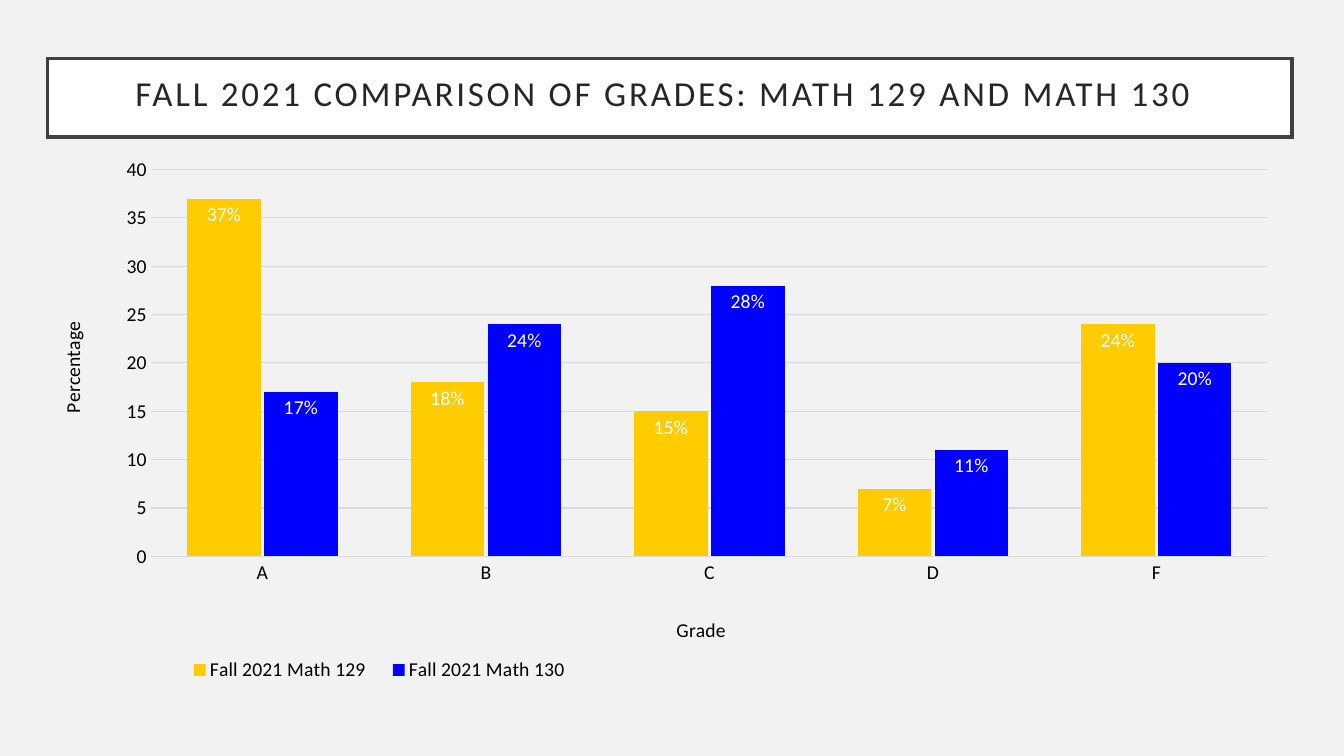
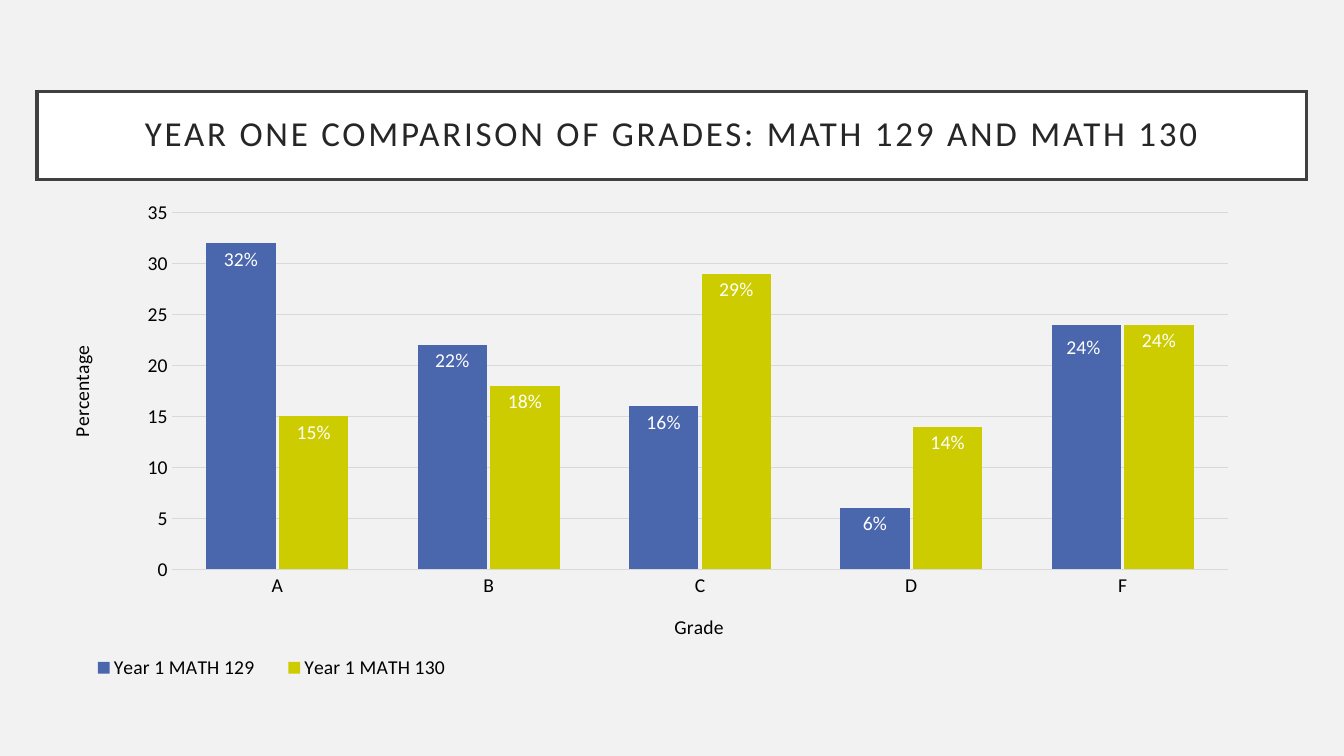
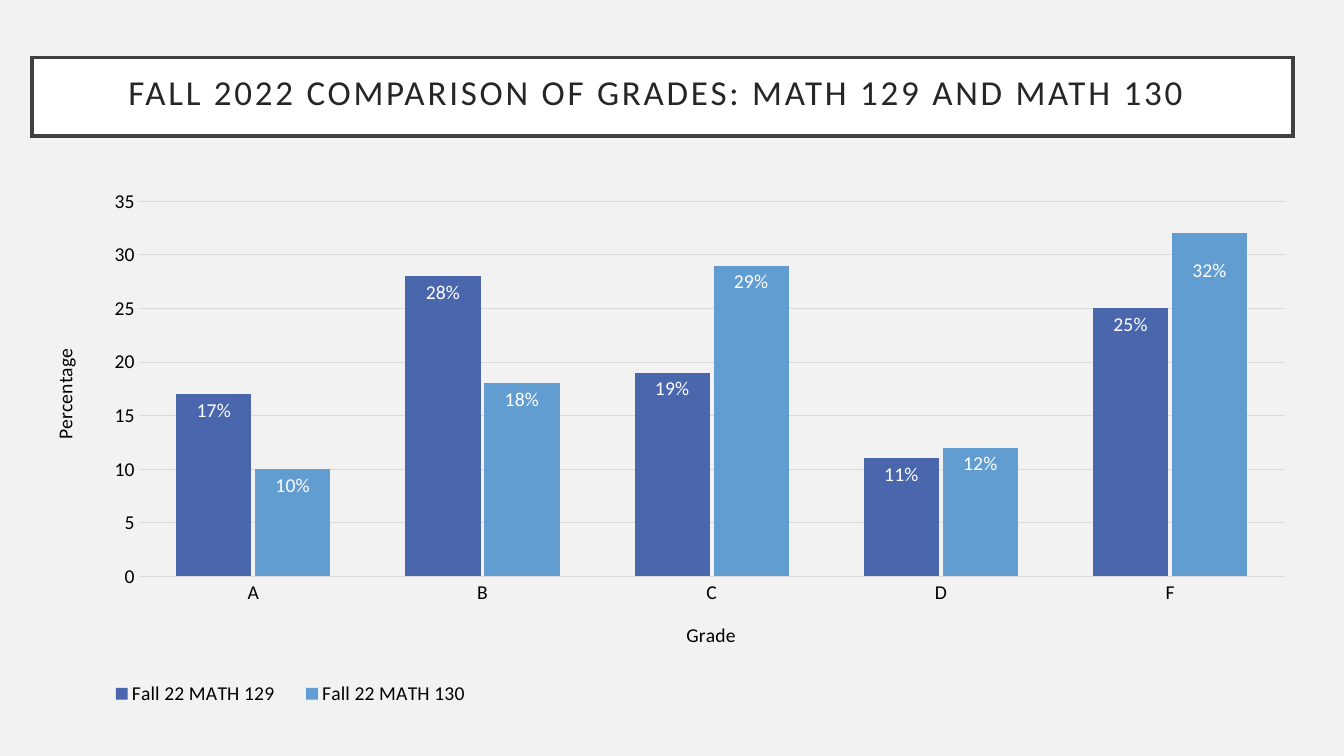
"""Builds three slides that compare the grades of MATH 129 and MATH 130."""
from copy import deepcopy
from dataclasses import dataclass
from typing import NamedTuple, Optional

from lxml import etree
from pptx import Presentation
from pptx import util as u
from pptx.chart.chart import Chart
from pptx.chart.data import CategoryChartData
from pptx.dml.color import RGBColor
from pptx.enum import chart as ce
from pptx.enum import shapes, text
from pptx.oxml.ns import qn
from pptx.slide import Slide

BACKDROP = RGBColor(0xF2, 0xF2, 0xF2)
WHITE = RGBColor(0xFF, 0xFF, 0xFF)
BLACK = RGBColor(0x00, 0x00, 0x00)
FRAME = RGBColor(0x40, 0x40, 0x40)
HEADING = RGBColor(0x26, 0x26, 0x26)
GRID = RGBColor(0xD9, 0xD9, 0xD9)
GOLD = RGBColor(0xFF, 0xCC, 0x00)
BLUE = RGBColor(0x00, 0x00, 0xFF)
INDIGO = RGBColor(0x4A, 0x66, 0xAC)
OLIVE = RGBColor(0xCC, 0xCC, 0x00)
SKY = RGBColor(0x62, 0x9D, 0xD1)

FONT = "Calibri"
CHART_TEXT = 14
GRADES = ("A", "B", "C", "D", "F")
LAYOUT_FOLLOWS = {qn("c:idx"), qn("c:legendPos"), qn("c:tx")}


class Spot(NamedTuple):
    """A position or offset in points."""
    x: float
    y: float


class Box(NamedTuple):
    """A rectangle in points."""
    x: float
    y: float
    w: float
    h: float


class Course(NamedTuple):
    """The grade percentages of one course."""
    name: str
    percentages: tuple[int, ...]
    color: RGBColor


class LabelShift(NamedTuple):
    """A value label moved off its usual place."""
    course: int
    grade: int
    offset: Spot


@dataclass(frozen=True)
class Comparison:
    """The content and placing of one slide."""
    heading: str
    heading_box: Box
    chart_box: Box
    plot_box: Box
    grade_title: Spot
    percentage_title: Spot
    legend_box: Box
    top_percentage: int
    courses: tuple[Course, Course]
    heading_nudge: Spot = Spot(0, 0)
    label_shift: Optional[LabelShift] = None


COMPARISONS = (
    Comparison(
        "FALL 2021 COMPARISON OF GRADES: MATH 129 AND MATH 130",
        Box(33.8, 41.8, 889.2, 56.2), Box(33.8, 104.4, 889.2, 386.6),
        Box(107.7, 121.1, 798.2, 276.4), Spot(480.7, 437.7), Spot(39.5, 227.2),
        Box(124, 467.6, 294, 22), 40,
        (Course("Fall 2021 Math 129", (37, 18, 15, 7, 24), GOLD),
         Course("Fall 2021 Math 130", (17, 24, 28, 11, 20), BLUE)),
        heading_nudge=Spot(4.6, 1.8),
    ),
    Comparison(
        "YEAR ONE COMPARISON OF GRADES: MATH 129 AND MATH 130",
        Box(26.6, 65.5, 906.5, 62.6), Box(43.9, 139, 844.6, 351.4),
        Box(122.7, 152, 754.7, 254.6), Spot(479.2, 435.2), Spot(46, 244.2),
        Box(50.5, 466, 287, 22), 35,
        (Course("Year 1 MATH 129", (32, 22, 16, 6, 24), INDIGO),
         Course("Year 1 MATH 130", (15, 18, 29, 14, 24), OLIVE)),
        label_shift=LabelShift(0, 4, Spot(-2, 5)),
    ),
    Comparison(
        "FALL 2022 COMPARISON OF GRADES: MATH 129 AND MATH 130",
        Box(23, 41, 900.7, 56.2), Box(23, 130.3, 905.8, 378),
        Box(99.1, 143.8, 818.6, 268), Spot(487.7, 441.2), Spot(34, 246.2),
        Box(65, 484.5, 285, 22), 35,
        (Course("Fall 22 MATH 129", (17, 28, 19, 11, 25), INDIGO),
         Course("Fall 22 MATH 130", (10, 18, 29, 12, 32), SKY)),
        heading_nudge=Spot(4.6, 1.8),
        label_shift=LabelShift(1, 4, Spot(0, 15)),
    ),
)


def in_points(box: Box) -> list[u.Length]:
    """Turn a box into lengths."""
    return [u.Pt(side) for side in box]


def style_font(font, color: RGBColor, size: float = CHART_TEXT) -> None:
    """Give a font the shared typeface, with its size and colour."""
    font.name = FONT
    font.size = u.Pt(size)
    font.bold = False
    font.color.rgb = color


def set_layout(part, settings: dict[str, object]) -> None:
    """Give a chart part a manual layout."""
    for automatic in part.findall(qn("c:layout")):
        part.remove(automatic)
    layout = etree.Element(qn("c:layout"))
    manual = etree.SubElement(layout, qn("c:manualLayout"))
    for key, value in settings.items():
        etree.SubElement(manual, qn(f"c:{key}")).set("val", str(value))
    part.insert(sum(child.tag in LAYOUT_FOLLOWS for child in part), layout)


def place(part, chart_box: Box, at: tuple[float, ...], inner: bool = False) -> None:
    """Place a chart part at a slide position given in points."""
    settings: dict[str, object] = {"layoutTarget": "inner"} if inner else {}
    settings |= {"xMode": "edge", "yMode": "edge",
                 "x": (at[0] - chart_box.x) / chart_box.w,
                 "y": (at[1] - chart_box.y) / chart_box.h}
    if len(at) == 4:
        settings |= {"w": at[2] / chart_box.w, "h": at[3] / chart_box.h}
    set_layout(part, settings)


def draw_heading(slide: Slide, comparison: Comparison) -> None:
    """Draw the framed heading."""
    banner = slide.shapes.add_shape(
        shapes.MSO_SHAPE.RECTANGLE, *in_points(comparison.heading_box))
    banner.shadow.inherit = False
    banner.fill.solid()
    banner.fill.fore_color.rgb = WHITE
    banner.line.color.rgb = FRAME
    banner.line.width = u.Pt(2.5)
    outline = banner._element.spPr.find(qn("a:ln"))
    etree.SubElement(outline, qn("a:miter")).set("lim", "800000")
    frame = banner.text_frame
    frame.word_wrap = True
    frame.vertical_anchor = text.MSO_ANCHOR.MIDDLE
    frame.margin_left = u.Pt(14.4)
    frame.margin_right = u.Pt(14.4 + 2 * comparison.heading_nudge.x)
    frame.margin_top = u.Pt(7.2)
    frame.margin_bottom = u.Pt(7.2 + 2 * comparison.heading_nudge.y)
    frame.text = comparison.heading
    heading = frame.paragraphs[0]
    heading.alignment = text.PP_ALIGN.CENTER
    heading.line_spacing = 0.9
    wording = heading.runs[0]
    style_font(wording.font, HEADING, 25)
    wording.font._element.set("spc", "200")


def style_axis(axis, name: str, spot: Spot, chart_box: Box) -> None:
    """Style one axis and place its title."""
    axis.major_tick_mark = axis.minor_tick_mark = ce.XL_TICK_MARK.NONE
    style_font(axis.tick_labels.font, BLACK)
    title = axis.axis_title
    title.text_frame.text = name
    style_font(title.text_frame.paragraphs[0].runs[0].font, BLACK)
    place(title._element, chart_box, spot)


def style_axes(chart: Chart, comparison: Comparison) -> None:
    """Style the grade and percentage axes."""
    grades, percentages = chart.category_axis, chart.value_axis
    style_axis(grades, "Grade", comparison.grade_title, comparison.chart_box)
    style_axis(percentages, "Percentage", comparison.percentage_title, comparison.chart_box)
    turned = percentages.axis_title.text_frame._element.find(qn("a:bodyPr"))
    turned.set("rot", "-5400000")
    turned.set("vert", "horz")
    percentages.minimum_scale = 0
    percentages.maximum_scale = comparison.top_percentage
    percentages.major_unit = 5
    percentages.tick_labels.number_format = "0"
    percentages.tick_labels.number_format_is_linked = False
    percentages.format.line.fill.background()
    percentages.has_major_gridlines = True
    for line in (grades.format.line, percentages.major_gridlines.format.line):
        line.color.rgb = GRID
        line.width = u.Pt(0.75)


def style_course(bars, color: RGBColor) -> None:
    """Colour the bars of one course and label them."""
    bars.format.fill.solid()
    bars.format.fill.fore_color.rgb = color
    bars.invert_if_negative = False
    labels = bars.data_labels
    labels.show_value = True
    labels.number_format = '0"%"'
    labels.number_format_is_linked = False
    labels.position = ce.XL_LABEL_POSITION.INSIDE_END
    style_font(labels.font, WHITE)


def shift_label(chart: Chart, shift: LabelShift, chart_box: Box) -> None:
    """Move one value label by its offset, without a leader line."""
    bars = chart.plots[0].series[shift.course]
    label = bars.points[shift.grade].data_label
    style_font(label.font, WHITE)
    label.position = ce.XL_LABEL_POSITION.INSIDE_END
    shared = bars._element.find(qn("c:dLbls"))
    moved = shared.find(qn("c:dLbl"))
    set_layout(moved, {"x": shift.offset.x / chart_box.w, "y": shift.offset.y / chart_box.h})
    moved.insert(2, deepcopy(shared.find(qn("c:numFmt"))))
    leader = shared.find(qn("c:showLeaderLines"))
    if leader is None:
        leader = etree.SubElement(shared, qn("c:showLeaderLines"))
    leader.set("val", "0")


def draw_chart(slide: Slide, comparison: Comparison) -> None:
    """Draw the grade chart of one comparison."""
    grades = CategoryChartData()
    grades.categories = GRADES
    for course in comparison.courses:
        grades.add_series(course.name, course.percentages)
    box = comparison.chart_box
    chart = slide.shapes.add_chart(
        ce.XL_CHART_TYPE.COLUMN_CLUSTERED, *in_points(box), grades).chart
    chart.has_title = False
    style_font(chart.font, BLACK)
    columns = chart.plots[0]
    columns.gap_width = 100
    columns.overlap = -5
    columns.vary_by_categories = False
    for bars, course in zip(columns.series, comparison.courses):
        style_course(bars, course.color)
    if comparison.label_shift:
        shift_label(chart, comparison.label_shift, box)
    style_axes(chart, comparison)
    chart.has_legend = True
    chart.legend.position = ce.XL_LEGEND_POSITION.BOTTOM
    chart.legend.include_in_layout = False
    style_font(chart.legend.font, BLACK)
    place(chart.legend._element, box, comparison.legend_box)
    plot_area = chart._chartSpace.find(f"{qn('c:chart')}/{qn('c:plotArea')}")
    place(plot_area, box, comparison.plot_box, inner=True)


def main() -> None:
    """Build and save the presentation."""
    deck = Presentation()
    deck.slide_width, deck.slide_height = u.Pt(960), u.Pt(540)
    backdrop = deck.slide_master.background.fill
    backdrop.solid()
    backdrop.fore_color.rgb = BACKDROP
    for comparison in COMPARISONS:
        slide = deck.slides.add_slide(deck.slide_layouts[6])
        draw_heading(slide, comparison)
        draw_chart(slide, comparison)
    deck.save("out.pptx")


if __name__ == "__main__":
    main()
